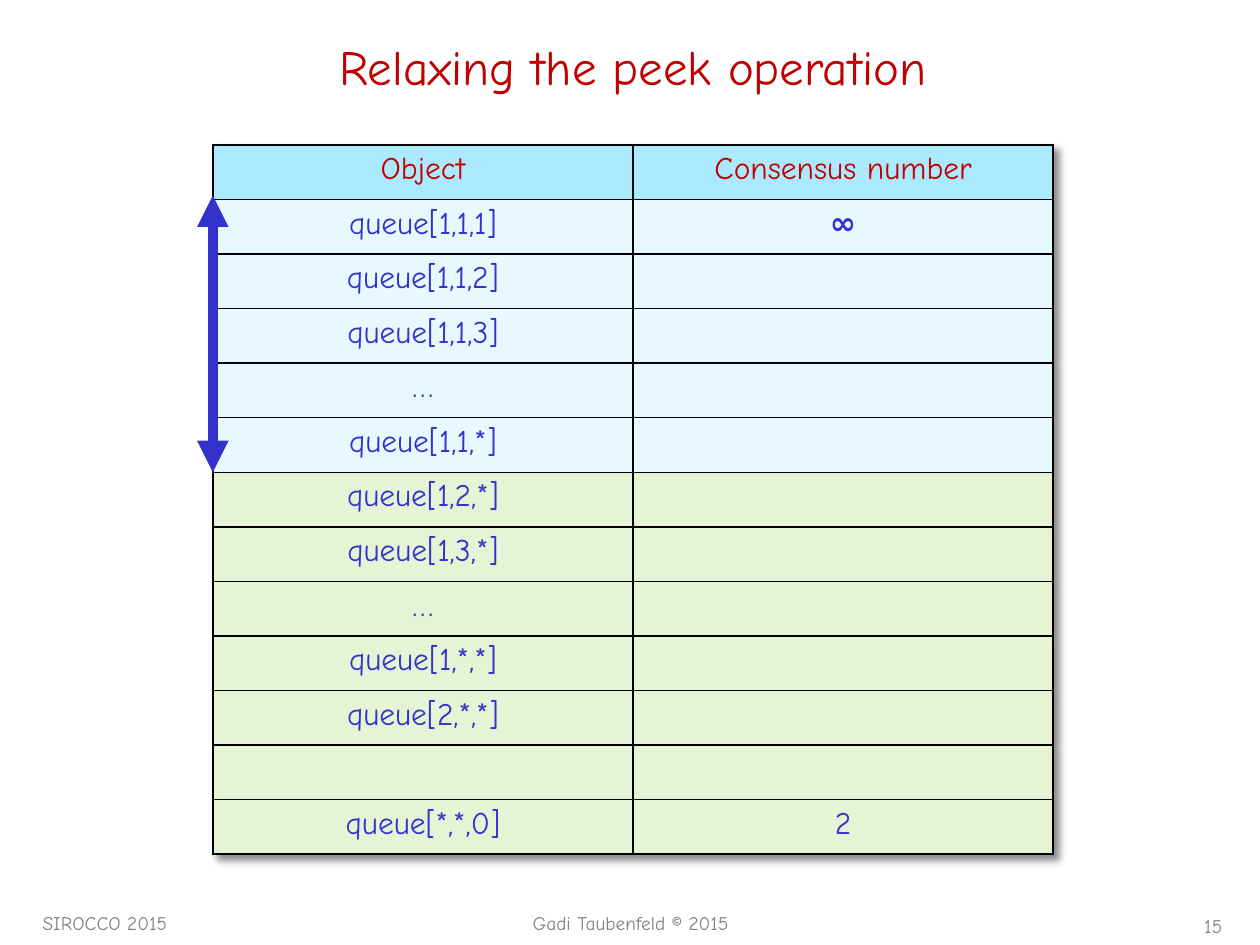
import lxml.etree
import pptx
import pptx.dml.color
import pptx.enum.shapes
import pptx.enum.text
import pptx.oxml.ns
import pptx.util
from collections import namedtuple
from dataclasses import dataclass

Cm = pptx.util.Cm
qn = pptx.oxml.ns.qn
Align = pptx.enum.text.PP_ALIGN
Anchor = pptx.enum.text.MSO_ANCHOR
Box = namedtuple("Box", "left top width height")  # centimetres


@dataclass(frozen=True)
class Theme:
    font: str = "Comic Neue"
    red: str = "C00000"
    blue: str = "3333CC"
    grey: str = "808080"
    black: str = "000000"
    header_fill: str = "ABE9FF"
    blue_fill: str = "E7F9FF"
    green_fill: str = "E5F4D4"
    title_size: int = 28
    table_size: int = 18
    footer_size: int = 11


THEME = Theme()
ROWS = [
    ("Object", "Consensus number"),
    ("queue[1,1,1]", "∞"),
    ("queue[1,1,2]", ""),
    ("queue[1,1,3]", ""),
    ("…", ""),
    ("queue[1,1,*]", ""),
    ("queue[1,2,*]", ""),
    ("queue[1,3,*]", ""),
    ("…", ""),
    ("queue[1,*,*]", ""),
    ("queue[2,*,*]", ""),
    ("", ""),
    ("queue[*,*,0]", "2"),
]
LAST_BLUE_ROW = 5


def rgb(value):
    return pptx.dml.color.RGBColor.from_string(value)


def add_child(parent, tag, **attributes):
    return lxml.etree.SubElement(parent, qn(tag), attributes)


def shadow_effect(blur, distance, direction, opacity):
    effects = lxml.etree.Element(qn("a:effectLst"))
    shadow = add_child(effects, "a:outerShdw", blurRad=str(pptx.util.Pt(blur)),
                       dist=str(pptx.util.Pt(distance)), dir=str(direction * 60000),
                       algn="tl", rotWithShape="0")
    color = add_child(shadow, "a:srgbClr", val=THEME.black)
    add_child(color, "a:alpha", val=str(opacity * 1000))
    return effects


def write_text(frame, text, size, color, align=Align.CENTER, bold=False):
    paragraph = frame.paragraphs[0]
    paragraph.alignment = align
    paragraph.font.size = pptx.util.Pt(size)
    if not text:
        return None
    run = paragraph.add_run()
    run.text = text
    run.font.size = pptx.util.Pt(size)
    run.font.name = THEME.font
    run.font.bold = bold
    run.font.color.rgb = rgb(color)
    return run


def add_text_box(slide, box, text, anchor=Anchor.TOP, **text_format):
    shape = slide.shapes.add_textbox(*map(Cm, box))
    shape.text_frame.word_wrap = True
    shape.text_frame.vertical_anchor = anchor
    return write_text(shape.text_frame, text, **text_format)


def add_title(slide, box):
    run = add_text_box(slide, box, "Relaxing the peek operation", anchor=Anchor.MIDDLE,
                       size=THEME.title_size, color=THEME.red)
    # Effects come directly after the text fill
    fill = run.font._element.find(qn("a:solidFill"))
    fill.addnext(shadow_effect(blur=3, distance=3, direction=45, opacity=40))


def set_borders(cell):
    properties = cell._tc.get_or_add_tcPr()
    for index, side in enumerate(("a:lnL", "a:lnR", "a:lnT", "a:lnB")):
        line = lxml.etree.Element(qn(side), w=str(pptx.util.Pt(1)))
        add_child(add_child(line, "a:solidFill"), "a:srgbClr", val=THEME.black)
        properties.insert(index, line)


def row_fill(row):
    if row == 0:
        return THEME.header_fill
    return THEME.blue_fill if row <= LAST_BLUE_ROW else THEME.green_fill


def add_queue_table(slide, box):
    frame = slide.shapes.add_table(len(ROWS), len(ROWS[0]), *map(Cm, box))
    table = frame.table
    for column in table.columns:
        column.width = Cm(box.width / len(ROWS[0]))
    for row, values in enumerate(ROWS):
        table.rows[row].height = Cm(box.height / len(ROWS))
        for column, text in enumerate(values):
            cell = table.cell(row, column)
            cell.fill.solid()
            cell.fill.fore_color.rgb = rgb(row_fill(row))
            set_borders(cell)
            write_text(cell.text_frame, text, size=THEME.table_size,
                       color=THEME.blue if row else THEME.red, bold=text == "∞")
    table._tbl.tblPr.insert(0, shadow_effect(blur=4, distance=4, direction=45, opacity=45))


def add_range_arrow(slide, box):
    # Spans the blue rows along the left edge of the table
    row_height = box.height / len(ROWS)
    top = box.top + row_height - 0.08
    bottom = box.top + row_height * (LAST_BLUE_ROW + 1)
    arrow = slide.shapes.add_connector(pptx.enum.shapes.MSO_CONNECTOR.STRAIGHT,
                                       Cm(box.left), Cm(top), Cm(box.left), Cm(bottom))
    arrow.line.color.rgb = rgb(THEME.blue)
    arrow.line.width = pptx.util.Pt(6)
    line = arrow.line._get_or_add_ln()
    for end in ("a:headEnd", "a:tailEnd"):
        add_child(line, end, type="triangle")
    add_child(arrow._element.spPr, "a:effectLst")


def add_footer(slide, box):
    parts = [
        (Box(0, 0, 5.28, 0.69), "SIROCCO 2015", Align.LEFT),
        (Box(9.5, 0, 5.21, 0.69), "Gadi Taubenfeld © 2015", Align.CENTER),
        (Box(box.width - 1.19, 0.07, 1.19, 0.74), "15", Align.RIGHT),
    ]
    for part, text, align in parts:
        place = part._replace(left=box.left + part.left, top=box.top + part.top)
        add_text_box(slide, place, text, size=THEME.footer_size, color=THEME.grey, align=align)


def main():
    presentation = pptx.Presentation()
    presentation.slide_width = Cm(25.4)
    presentation.slide_height = Cm(19.05)
    slide = presentation.slides.add_slide(presentation.slide_layouts[6])
    table_box = Box(4.29, 2.92, 16.94, 14.3)
    add_title(slide, Box(0.69, 0.33, 24.13, 2.01))
    add_queue_table(slide, table_box)
    add_range_arrow(slide, table_box)
    add_footer(slide, Box(0.61, 18.24, 24.28, 0.81))
    presentation.save("out.pptx")


if __name__ == "__main__":
    main()
